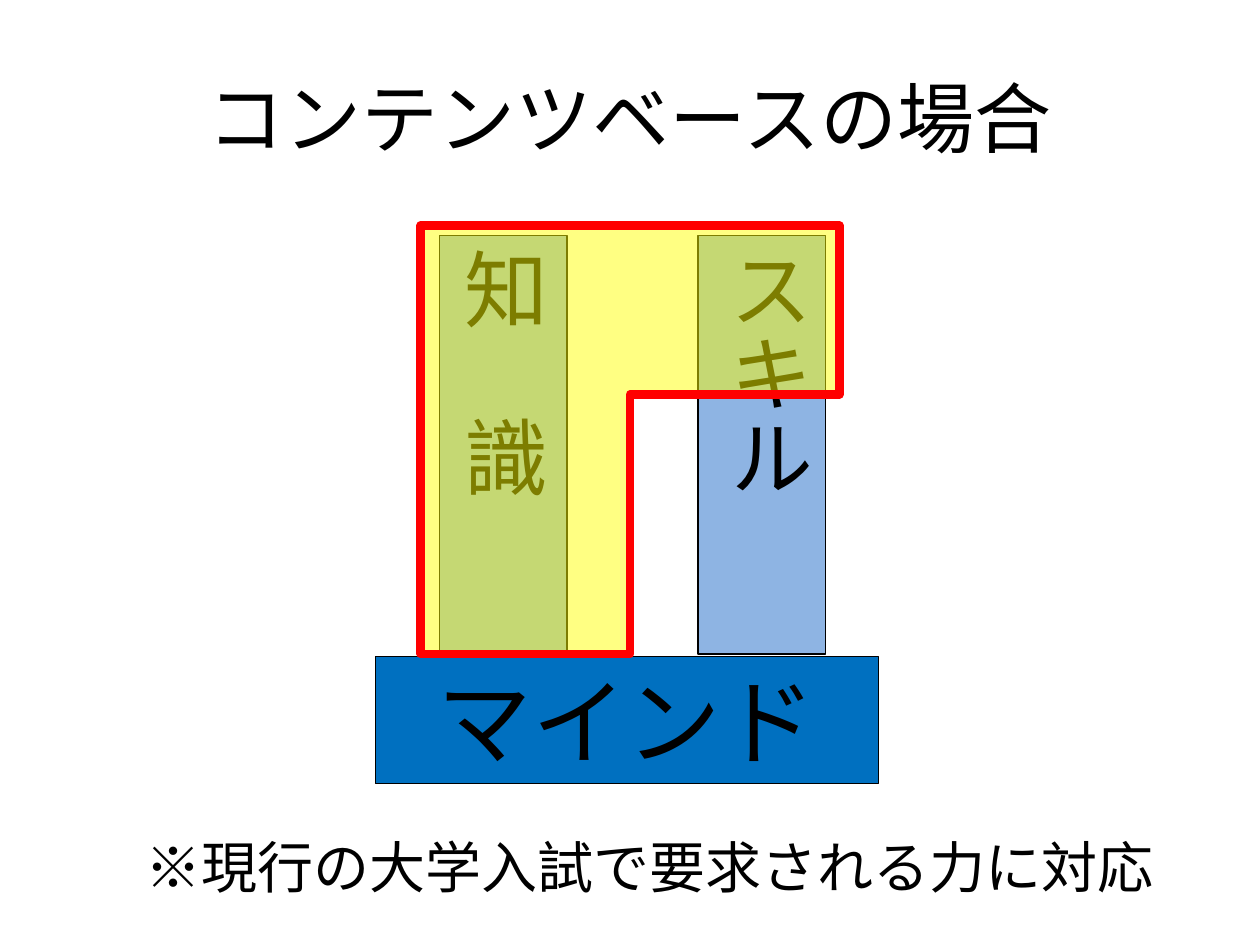
from dataclasses import dataclass

from lxml.etree import SubElement
from pptx import Presentation
from pptx.dml.color import RGBColor as Rgb
from pptx.enum.shapes import MSO_SHAPE as Shape
from pptx.enum.text import MSO_ANCHOR as Anchor, MSO_AUTO_SIZE as Fit, PP_ALIGN as Align
from pptx.oxml.ns import qn
from pptx.util import Inches, Pt

WIDE, HIGH = 10, 7.5


@dataclass(frozen=True)
class Theme:
    ink: str = "000000"
    base: str = "0070C0"
    pillar: str = "8EB4E3"
    glow: str = "FFFF00"
    edge: str = "FF0000"
    head: int = 44
    mind: int = 54
    label: int = 48
    note: int = 32
    latin: str = "Cabin"
    asian: str = "Noto Sans CJK JP"


THEME = Theme()


def box(x, y, w, h):
    """Turn shares of the slide's size into lengths."""
    return [Inches(round(share * side, 2))
            for share, side in ((x, WIDE), (y, HIGH), (w, WIDE), (h, HIGH))]


def write(shape, text, size, font=THEME.asian, align=Align.CENTER,
          anchor=Anchor.MIDDLE, upright=False, grow=True):
    frame = shape.text_frame
    frame.word_wrap = True
    frame.auto_size = Fit.SHAPE_TO_FIT_TEXT if grow else Fit.NONE
    frame.vertical_anchor = anchor
    if upright:
        frame._txBody.bodyPr.set("vert", "eaVert")
    para = frame.paragraphs[0]
    para.alignment = align
    run = para.add_run()
    run.text = text
    run.font.size = Pt(size)
    run.font.name = font
    run.font.color.rgb = Rgb.from_string(THEME.ink)
    asian = SubElement(run.font._element, qn("a:ea"))
    asian.set("typeface", THEME.asian)


def block(parent, kind, area, fill, line=THEME.ink, width=0.75):
    shape = parent.add_shape(kind, *area)
    shape.shadow.inherit = False
    shape.fill.solid()
    shape.fill.fore_color.rgb = Rgb.from_string(fill)
    shape.line.color.rgb = Rgb.from_string(line)
    shape.line.width = Pt(width)
    return shape


def caption(shapes, area, text, size, **form):
    write(shapes.add_textbox(*area), text, size, font=THEME.latin, **form)


def cover(shapes, area):
    """Translucent corner turned to cover one pillar and part of the other."""
    shape = block(shapes, Shape.CORNER, area, THEME.glow, THEME.edge, 5)
    shape.adjustments[0] = 0.5
    shape.adjustments[1] = 0.404
    shape.rotation = 90
    tint = shape.fill._xPr.find(qn("a:solidFill"))[0]
    SubElement(tint, qn("a:alpha")).set("val", "49000")


def main():
    deck = Presentation()
    deck.slide_width, deck.slide_height = Inches(WIDE), Inches(HIGH)
    shapes = deck.slides.add_slide(deck.slide_layouts[6]).shapes

    # Base and the two pillars on it
    group = shapes.add_group_shape().shapes
    mind = block(group, Shape.RECTANGLE, box(0.298, 0.695, 0.399, 0.135), THEME.base)
    write(mind, "マインド", THEME.mind)
    pillars = ("知　識", Anchor.MIDDLE), ("スキル", Anchor.TOP)
    for col, (text, anchor) in enumerate(pillars):
        area = box(0.349 + 0.205 * col, 0.249, 0.101, 0.443)
        pillar = block(group, Shape.RECTANGLE, area, THEME.pillar)
        write(pillar, text, THEME.label, align=Align.LEFT, anchor=anchor, upright=True)

    # Title
    caption(shapes, box(0.05, 0.04, 0.9, 0.167), "コンテンツベースの場合",
            THEME.head, grow=False)

    # Highlighted range
    cover(shapes, box(0.33, 0.244, 0.34, 0.443))

    # Note below
    caption(shapes, box(0.059, 0.875, 0.914, 0.085),
            "※現行の大学入試で要求される力に対応", THEME.note, anchor=Anchor.TOP)

    deck.save("out.pptx")


if __name__ == "__main__":
    main()
